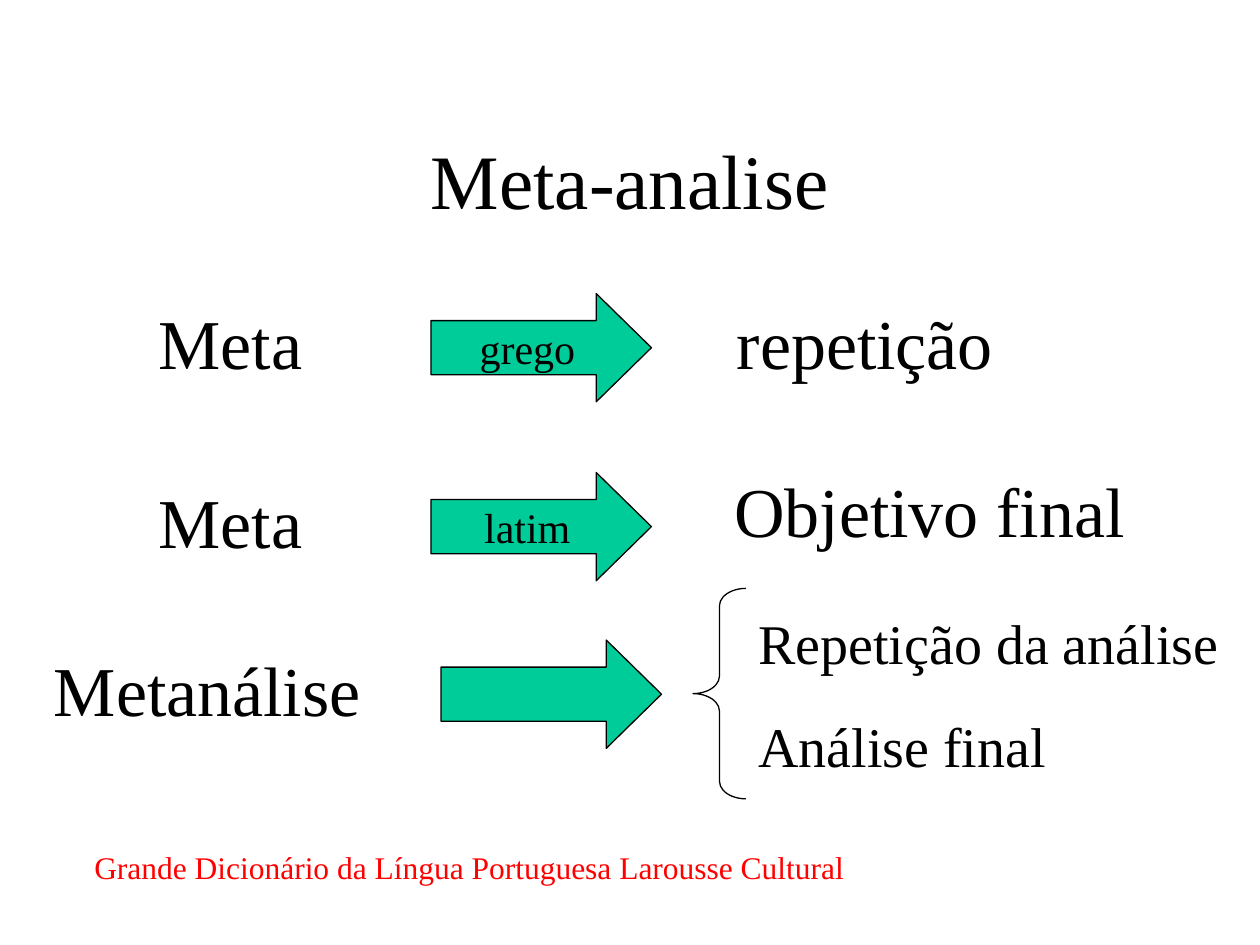
from pptx import Presentation
from pptx import util as u
from pptx.dml.color import RGBColor
from pptx.enum import shapes, text

FONT = "Times New Roman"
BLACK, GREEN, RED = "000000", "00CC99", "FF0000"
WIDTH, HEIGHT = 10, 7.5
ARROW_SIZE = (1.75, 0.86)

TITLE = "Meta-analise"
TERMS = [
    ("Meta", 1.16, 2.33, 1.34, "grego", 3.42),
    ("Meta", 1.16, 3.75, 1.34, "latim", 3.42),
    ("Metanálise", 0.33, 5.08, 2.64, "", 3.5),
]
MEANINGS = [
    ("repetição", 5.75, 2.33, 2.24, 40),
    ("Objetivo final", 5.73, 3.66, 3.3, 40),
    ("Repetição da análise", 5.92, 4.78, 3.86, 32),
    ("Análise final", 5.92, 5.6, 2.49, 32),
]
SOURCE = "Grande Dicionário da Língua Portuguesa Larousse Cultural"


def rgb(color):
    return RGBColor.from_string(color)


def write(shape, content, size, color=BLACK, align=text.PP_ALIGN.LEFT,
          anchor=text.MSO_ANCHOR.TOP, wrap=False):
    frame = shape.text_frame
    frame.word_wrap = wrap
    frame.vertical_anchor = anchor
    paragraph = frame.paragraphs[0]
    paragraph.alignment = align
    run = paragraph.add_run()
    run.text = content
    run.font.name = FONT
    run.font.size = u.Pt(size)
    run.font.color.rgb = rgb(color)


def add_text(slide, content, left, top, width, size, height=None, **style):
    height = height or size * 1.2 / 72 + 0.1
    box = slide.shapes.add_textbox(*map(u.Inches, (left, top, width, height)))
    write(box, content, size, **style)
    if not style.get("wrap"):
        box.text_frame.auto_size = text.MSO_AUTO_SIZE.SHAPE_TO_FIT_TEXT


def add_outline(slide, kind, left, top, width, height, adjustments, fill=None):
    shape = slide.shapes.add_shape(kind, *map(u.Inches, (left, top, width, height)))
    shape.shadow.inherit = False
    for index, value in enumerate(adjustments):
        shape.adjustments[index] = value
    if fill:
        shape.fill.solid()
        shape.fill.fore_color.rgb = rgb(fill)
    else:
        shape.fill.background()
    shape.line.color.rgb = rgb(BLACK)
    shape.line.width = u.Pt(0.75)
    return shape


def main():
    presentation = Presentation()
    presentation.slide_width = u.Inches(WIDTH)
    presentation.slide_height = u.Inches(HEIGHT)
    slide = presentation.slides.add_slide(presentation.slide_layouts[6])
    centred = dict(align=text.PP_ALIGN.CENTER, anchor=text.MSO_ANCHOR.MIDDLE)

    title_width = 7.74
    add_text(slide, TITLE, (WIDTH - title_width) / 2, 0.92, title_width, 44,
             height=1, wrap=True, **centred)
    for term, left, top, width, language, arrow_left in TERMS:
        add_text(slide, term, left, top, width, 40)
        arrow = add_outline(slide, shapes.MSO_SHAPE.RIGHT_ARROW, arrow_left, top,
                            *ARROW_SIZE, (0.5, 0.51), GREEN)
        if language:
            write(arrow, language, 24, **centred)
    add_outline(slide, shapes.MSO_SHAPE.LEFT_BRACE, 5.5, 4.67, 0.42, 1.67, (0.33, 0.5))
    for meaning, left, top, width, size in MEANINGS:
        add_text(slide, meaning, left, top, width, size)
    add_text(slide, SOURCE, 0.65, 6.68, 6.16, 18, color=RED)

    presentation.save("out.pptx")


if __name__ == "__main__":
    main()
